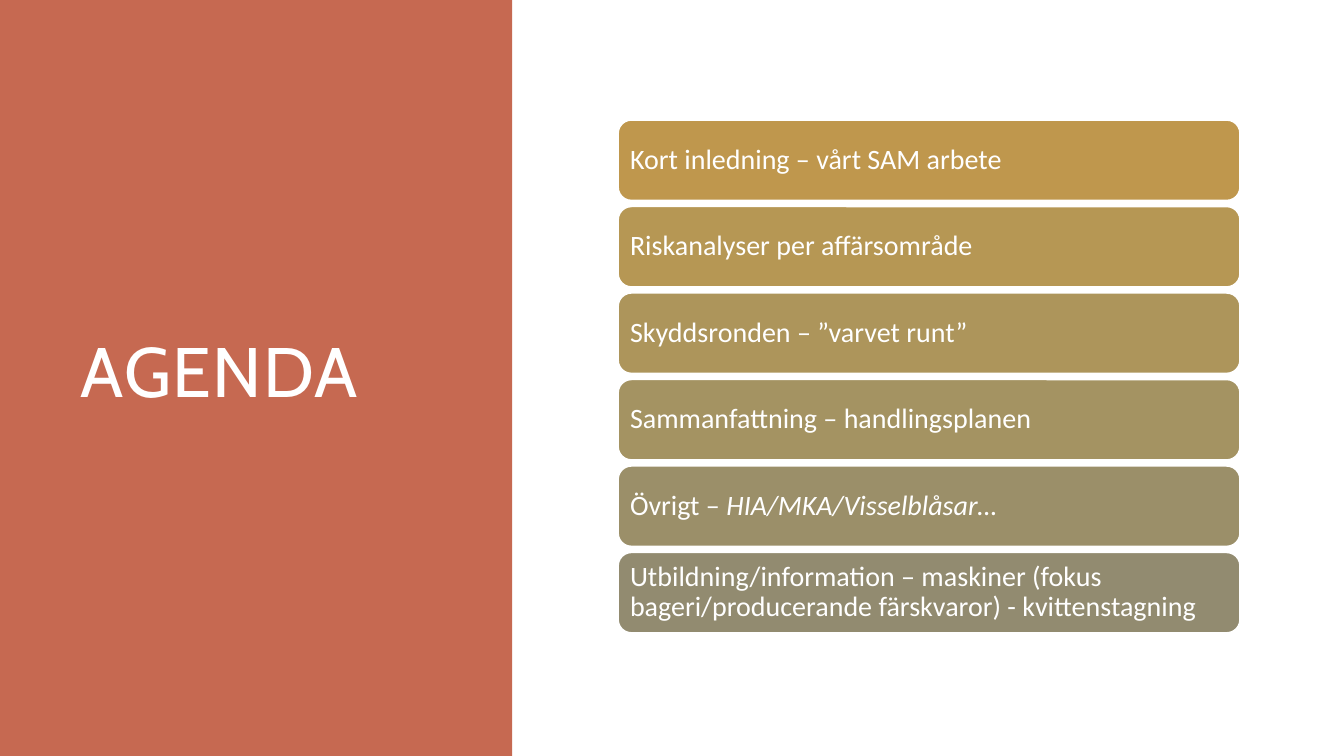
from pptx import Presentation
from pptx import util as u
from pptx.dml.color import RGBColor
from pptx.enum import shapes, text

# Content: each agenda item is a fill colour and its (text, italic) runs
TITLE = "AGENDA"
AGENDA = [
    ("BF974D", [("Kort inledning – vårt SAM arbete", False)]),
    ("B69754", [("Riskanalyser per affärsområde", False)]),
    ("AD955B", [("Skyddsronden – ”varvet runt”", False)]),
    ("A49362", [("Sammanfattning – handlingsplanen", False)]),
    ("9B8F69", [("Övrigt – ", False), ("HIA/MKA/Visselblåsar…", True)]),
    ("928B70", [("Utbildning/information – maskiner (fokus "
                 "bageri/producerande färskvaror) - kvittenstagning", False)]),
]
WHITE, TERRACOTTA = "FFFFFF", "C66951"

# Layout in px, 100 to the inch
SLIDE_WIDTH, SLIDE_HEIGHT = 1333, 750
PANEL_WIDTH = 508
TITLE_BOX = (70, 70, 374, 609)
BAR_LEFT, BAR_WIDTH, BAR_HEIGHT = 613, 617, 80
FIRST_TOP, LAST_TOP = 119, 548
BAR_PITCH = (LAST_TOP - FIRST_TOP) / (len(AGENDA) - 1)
BAR_INSET = 8


def px(length):
    return u.Emu(round(length * 9144))


def color(value):
    return RGBColor.from_string(value)


def write(shape, runs, *, font, size, line_spacing, tracking=None, inset=None):
    frame = shape.text_frame
    frame.word_wrap = True
    frame.auto_size = text.MSO_AUTO_SIZE.NONE
    frame.vertical_anchor = text.MSO_ANCHOR.MIDDLE
    if inset is not None:
        frame.margin_left = frame.margin_right = px(inset)
        frame.margin_top = frame.margin_bottom = px(inset)
    paragraph = frame.paragraphs[0]
    paragraph.alignment = text.PP_ALIGN.LEFT
    paragraph.line_spacing = line_spacing
    for words, italic in runs:
        run = paragraph.add_run()
        run.text = words
        run.font.name = font
        run.font.size = u.Pt(size)
        run.font.italic = italic
        run.font.color.rgb = color(WHITE)
        if tracking:
            run.font._element.set("spc", str(tracking))


def add_block(slide, kind, box, fill, outline=None):
    shape = slide.shapes.add_shape(kind, *map(px, box))
    shape.shadow.inherit = False
    shape.fill.solid()
    shape.fill.fore_color.rgb = color(fill)
    if outline:
        shape.line.color.rgb = color(outline)
        shape.line.width = u.Pt(1.25)
    else:
        shape.line.fill.background()
    return shape


def main():
    presentation = Presentation()
    presentation.slide_width = px(SLIDE_WIDTH)
    presentation.slide_height = px(SLIDE_HEIGHT)
    slide = presentation.slides.add_slide(presentation.slide_layouts[5])

    # Coloured panel with the title in front of it
    panel = add_block(slide, shapes.MSO_SHAPE.RECTANGLE,
                      (0, 0, PANEL_WIDTH, SLIDE_HEIGHT), TERRACOTTA)
    title = slide.shapes.title
    title.element.addprevious(panel.element)
    title.left, title.top, title.width, title.height = map(px, TITLE_BOX)
    write(title, [(TITLE, False)], font="Cabin", size=50,
          line_spacing=0.8, tracking=100)

    # Agenda bars
    for index, (fill, runs) in enumerate(AGENDA):
        top = FIRST_TOP + index * BAR_PITCH
        bar = add_block(slide, shapes.MSO_SHAPE.ROUNDED_RECTANGLE,
                        (BAR_LEFT, top, BAR_WIDTH, BAR_HEIGHT), fill, WHITE)
        write(bar, runs, font="Calibri", size=20,
              line_spacing=0.9, inset=BAR_INSET)

    presentation.save("out.pptx")


if __name__ == "__main__":
    main()
